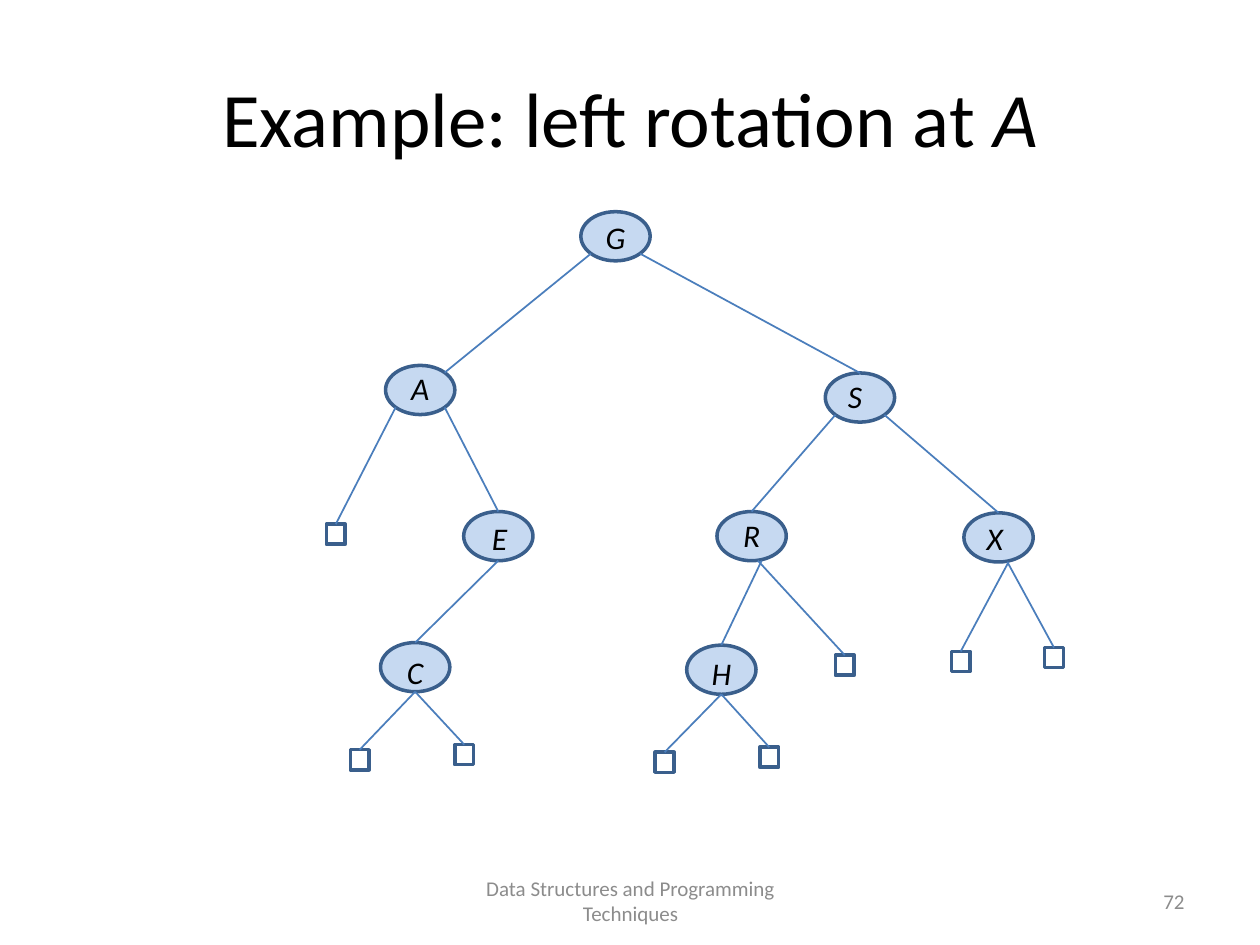
from dataclasses import dataclass

import pptx
import pptx.dml.color
import pptx.enum.shapes
import pptx.enum.text
import pptx.util
from lxml import etree

Inches = pptx.util.Inches
Pt = pptx.util.Pt
Kind = pptx.enum.shapes.MSO_SHAPE
Align = pptx.enum.text.PP_ALIGN
Anchor = pptx.enum.text.MSO_ANCHOR

HUES = {"fill": "C6D9F1", "rim": "3A5F8C", "edge": "4B7EBC",
        "ink": "000000", "foot": "8C8C8C"}
NODE = (0.55, 0.39)
LEAF = (0.15, 0.16)
DIAG = 0.5 ** 0.5 / 2  # diagonal point of an ellipse, as a share of its size
PORTS = {"sw": (-DIAG, DIAG), "s": (0, 0.5), "se": (DIAG, DIAG),
         "ne": (DIAG, -DIAG)}


@dataclass
class Node:
    key: str
    left: float
    top: float
    dx: float = 0  # shift of the letter
    dy: float = 0


@dataclass
class Edge:
    head: str
    port: str
    tail: str = ""       # child node, or
    leaf: tuple = ()     # left and top of an empty leaf
    shift: float = 0     # move of the start to the right
    end: str = ""        # port on the child, if not its top


NODES = [
    Node("G", 4.61, 1.68), Node("A", 3.06, 2.9, 0, -0.02),
    Node("S", 6.55, 2.96, -0.04, -0.02), Node("E", 3.68, 4.06, 0.01, 0.01),
    Node("R", 5.69, 4.06, 0, -0.01), Node("X", 7.65, 4.07, -0.03, 0),
    Node("C", 3.02, 5.1, 0, 0.03), Node("H", 5.45, 5.12, 0, 0.02),
]
EDGES = [
    Edge("G", "sw", "A", end="ne"), Edge("G", "se", "S"),
    Edge("A", "sw", leaf=(2.59, 4.16)), Edge("A", "se", "E"),
    Edge("S", "sw", "R"), Edge("S", "se", "X"),
    Edge("E", "s", "C"),
    Edge("R", "s", "H", shift=0.08),
    Edge("R", "s", leaf=(6.63, 5.2), shift=0.05),
    Edge("X", "s", leaf=(7.55, 5.17), shift=0.08),
    Edge("X", "s", leaf=(8.29, 5.14), shift=0.07),
    Edge("C", "s", leaf=(2.78, 5.95)), Edge("C", "s", leaf=(3.61, 5.91)),
    Edge("H", "s", leaf=(5.2, 5.97)), Edge("H", "s", leaf=(6.03, 5.93)),
]


def tint(name: str):
    return pptx.dml.color.RGBColor.from_string(HUES[name])


def write(frame, text: str, size=18, hue="ink", italic=False,
          align=Align.CENTER, anchor=Anchor.TOP) -> None:
    """Add a run to the first paragraph of a text frame."""
    frame.word_wrap = True
    frame.vertical_anchor = anchor
    para = frame.paragraphs[0]
    para.alignment = align
    run = para.add_run()
    run.text = text
    run.font.name = "Calibri"
    run.font.size = Pt(size)
    run.font.italic = italic
    run.font.color.rgb = tint(hue)


def box(slide, left: float, top: float, wide: float, high: float):
    shape = slide.shapes.add_textbox(*map(Inches, (left, top, wide, high)))
    return shape.text_frame


def draw(slide, kind, left: float, top: float, size: tuple, fill=""):
    shape = slide.shapes.add_shape(kind, *map(Inches, (left, top, *size)))
    shape.shadow.inherit = False
    if fill:
        shape.fill.solid()
        shape.fill.fore_color.rgb = tint(fill)
    else:
        shape.fill.background()
    shape.line.color.rgb = tint("rim")
    shape.line.width = Pt(2)
    return shape


def spot(node: Node, port: str, shift=0.0) -> tuple:
    """Point on the rim of a node."""
    dx, dy = PORTS[port]
    wide, high = NODE
    return (Inches(node.left + wide * (0.5 + dx) + shift),
            Inches(node.top + high * (0.5 + dy)))


def link(slide, start: tuple, end: tuple):
    line = slide.shapes.add_connector(
        pptx.enum.shapes.MSO_CONNECTOR.STRAIGHT, *start, *end)
    line.line.color.rgb = tint("edge")
    line.line.width = Pt(1)
    props = line._element.spPr
    space = "http://schemas.openxmlformats.org/drawingml/2006/main"
    etree.SubElement(props, f"{{{space}}}effectLst")
    return line


def main() -> None:
    deck = pptx.Presentation()
    deck.slide_width, deck.slide_height = Inches(10), Inches(7.5)
    slide = deck.slides.add_slide(deck.slide_layouts[5])

    # Title
    title = slide.shapes.title
    title.left, title.top = Inches(0.5), Inches(0.3)
    title.width, title.height = Inches(9), Inches(1.25)
    for text, italic in (("Example: left rotation at ", False), ("A", True)):
        write(title.text_frame, text, size=44, italic=italic,
              anchor=Anchor.MIDDLE)

    # Footer and page number
    foot = {"size": 12, "hue": "foot", "anchor": Anchor.MIDDLE}
    write(box(slide, 3.42, 6.95, 3.17, 0.4),
          "Data Structures and Programming Techniques", **foot)
    write(box(slide, 7.17, 6.95, 2.33, 0.4), "72", align=Align.RIGHT, **foot)

    # Tree nodes
    nodes = {node.key: node for node in NODES}
    ovals = {node.key: draw(slide, Kind.OVAL, node.left, node.top, NODE,
                            "fill") for node in NODES}

    # Edges, with their empty leaves
    for edge in EDGES:
        start = spot(nodes[edge.head], edge.port, edge.shift)
        if edge.end:
            link(slide, start, spot(nodes[edge.tail], edge.end))
            continue
        if edge.leaf:
            child = draw(slide, Kind.RECTANGLE, *edge.leaf, LEAF)
        else:
            child = ovals[edge.tail]
        link(slide, start, start).end_connect(child, 0)

    # Letters
    for node in NODES:
        frame = box(slide, node.left + node.dx, node.top + node.dy, 0.55, 0.4)
        write(frame, node.key, italic=True)

    deck.save("out.pptx")


if __name__ == "__main__":
    main()
